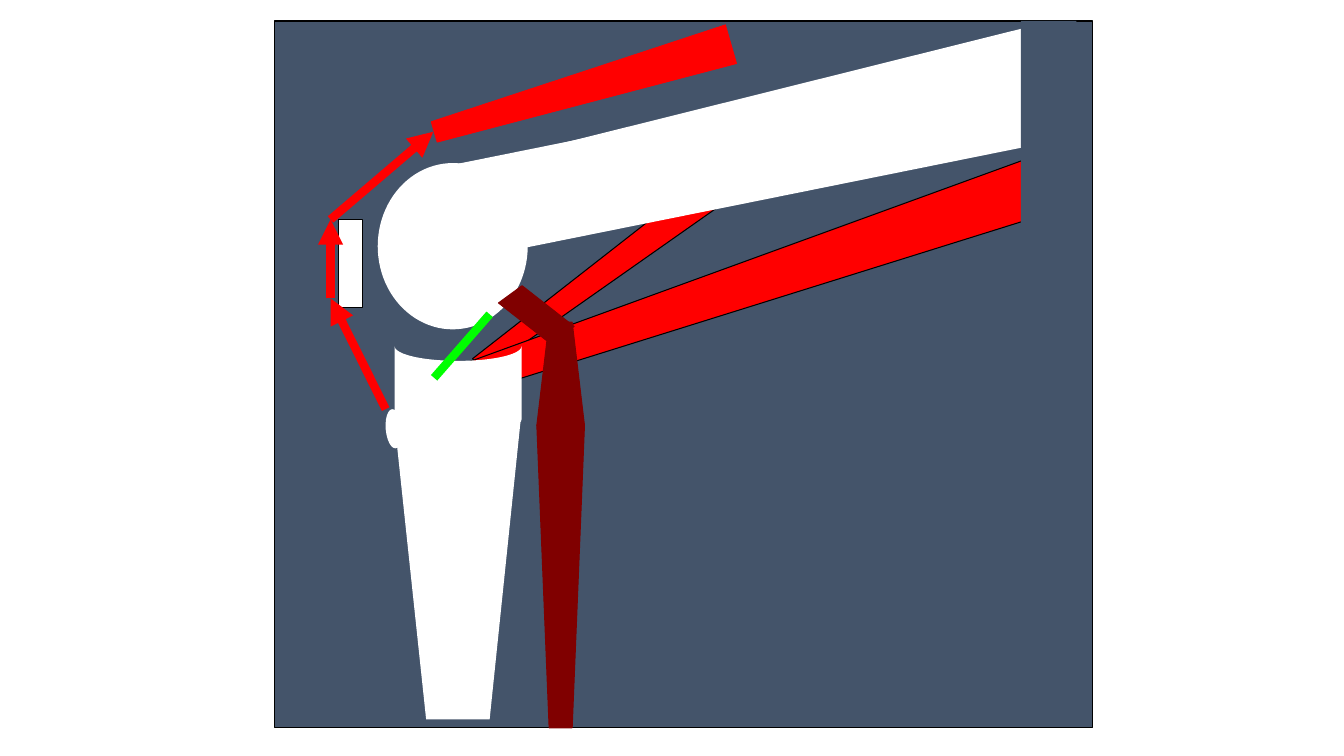
import dataclasses
import itertools

import pptx
import pptx.dml.color
import pptx.enum.shapes
import pptx.oxml
import pptx.oxml.ns
import pptx.util

Cm = pptx.util.Cm
Pt = pptx.util.Pt
PRESET = pptx.enum.shapes.MSO_SHAPE


@dataclasses.dataclass(frozen=True)
class Theme:
    backdrop: str = "44546A"
    bone: str = "FFFFFF"
    muscle: str = "FF0000"
    calf: str = "800000"
    ligament: str = "00FF00"
    outline: str = "000000"
    thin: float = 0.75
    thick: float = 6


THEME = Theme()


@dataclasses.dataclass(frozen=True)
class Box:
    """Region in centimetres on the slide."""
    left: float
    top: float
    width: float
    height: float

    def at(self, point):
        return Cm(self.left + point[0]), Cm(self.top + point[1])


def rgb(colour):
    return pptx.dml.color.RGBColor.from_string(colour)


def paint(part, fill, line=None):
    part.shadow.inherit = False
    part.fill.solid()
    part.fill.fore_color.rgb = rgb(fill)
    if line:
        part.line.color.rgb = rgb(line)
        part.line.width = Pt(THEME.thin)
    else:
        part.line.fill.background()
    return part


def add_preset(slide, box, kind, corner, size, fill, line=None, turn=0):
    part = slide.shapes.add_shape(kind, *box.at(corner), Cm(size[0]), Cm(size[1]))
    part.rotation = turn
    return paint(part, fill, line)


def add_outline(slide, box, points, fill, line=None):
    first, *others = [box.at(point) for point in points]
    builder = slide.shapes.build_freeform(*first)
    builder.add_line_segments(others, close=True)
    return paint(builder.convert_to_shape(), fill, line)


def add_band(slide, box, start, end, colour, arrow=False):
    """Thick straight line, with a triangular head at its end if asked."""
    band = slide.shapes.add_connector(
        pptx.enum.shapes.MSO_CONNECTOR.STRAIGHT, *box.at(start), *box.at(end))
    band.line.color.rgb = rgb(colour)
    band.line.width = Pt(THEME.thick)
    if arrow:
        head = pptx.oxml.parse_xml(
            f'<a:tailEnd {pptx.oxml.ns.nsdecls("a")} type="triangle"/>')
        band.line._get_or_add_ln().append(head)
    band._element.spPr.append(
        pptx.oxml.parse_xml(f'<a:effectLst {pptx.oxml.ns.nsdecls("a")}/>'))


def draw_backdrop(slide, box):
    add_preset(slide, box, PRESET.RECTANGLE, (0, 0), (box.width, box.height),
               THEME.backdrop, THEME.outline)


def draw_hamstrings(slide, box):
    short_head = [(12.07, 2.97), (4.98, 8.51), (5.23, 8.86), (12.6, 3.68)]
    long_head = [(19.48, 3.28), (4.06, 8.89), (4.29, 9.6), (19.96, 4.7)]
    for head in (short_head, long_head):
        add_outline(slide, box, head, THEME.muscle, THEME.outline)


def draw_femur(slide, box):
    add_preset(slide, box, PRESET.OVAL, (2.59, 3.58), (3.78, 4.19), THEME.bone)
    add_preset(slide, box, PRESET.RECTANGLE, (4.04, 2.18), (15.44, 2.41),
               THEME.bone, turn=348.6)
    add_outline(slide, box, [(18.87, 0.18), (4.11, 3.86), (4.29, 4.6), (19.2, 1.65)],
                THEME.bone)


def draw_tibia(slide, box):
    add_preset(slide, box, PRESET.FLOWCHART_STORED_DATA, (3.51, 7.7), (2.21, 3.2),
               THEME.bone, turn=270)
    add_outline(slide, box, [(3, 9.98), (3.81, 17.6), (5.41, 17.6), (6.2, 9.98)],
                THEME.bone)
    add_preset(slide, box, PRESET.OVAL, (2.79, 9.78), (0.41, 0.99),
               THEME.bone, turn=355)


def draw_ligament(slide, box):
    add_band(slide, box, (5.41, 7.39), (4.01, 8.99), THEME.ligament)


def trim_thigh(slide, box):
    """Cut the thigh off with a straight edge."""
    add_preset(slide, box, PRESET.RECTANGLE, (18.8, 0), (1.4, 6.2), THEME.backdrop)


def draw_extensor(slide, box):
    """Kneecap, the pull of its tendon and the thigh muscle above."""
    add_preset(slide, box, PRESET.RECTANGLE, (1.6, 5), (0.61, 2.21),
               THEME.bone, THEME.outline)
    tendon = [(2.79, 9.78), (1.4, 6.99), (1.4, 5), (3.99, 2.79)]
    for start, end in itertools.pairwise(tendon):
        add_band(slide, box, start, end, THEME.muscle, arrow=True)
    add_outline(slide, box, [(11.35, 0.1), (3.94, 2.54), (4.09, 3.05), (11.63, 1.07)],
                THEME.muscle, THEME.muscle)


def draw_calf(slide, box):
    belly = 10.19
    for end in (box.height, 7.59):
        add_outline(slide, box, [(6.6, belly), (6.91, end), (7.49, end), (7.8, belly)],
                    THEME.calf, THEME.calf)
    origin = add_preset(slide, box, PRESET.PARALLELOGRAM, (5.99, 6.6), (1.19, 1.6),
                        THEME.calf, THEME.calf, turn=323.9)
    origin.adjustments[0] = 0.382
    origin._element.spPr.xfrm.set("flipH", "1")


def main():
    deck = pptx.Presentation()
    deck.slide_width, deck.slide_height = Cm(33.87), Cm(19.05)
    slide = deck.slides.add_slide(deck.slide_layouts[6])
    knee = Box(6.93, 0.53, 20.6, 17.81)
    for draw in (draw_backdrop, draw_hamstrings, draw_femur, draw_tibia,
                 draw_ligament, trim_thigh, draw_extensor, draw_calf):
        draw(slide, knee)
    deck.save("out.pptx")


if __name__ == "__main__":
    main()
